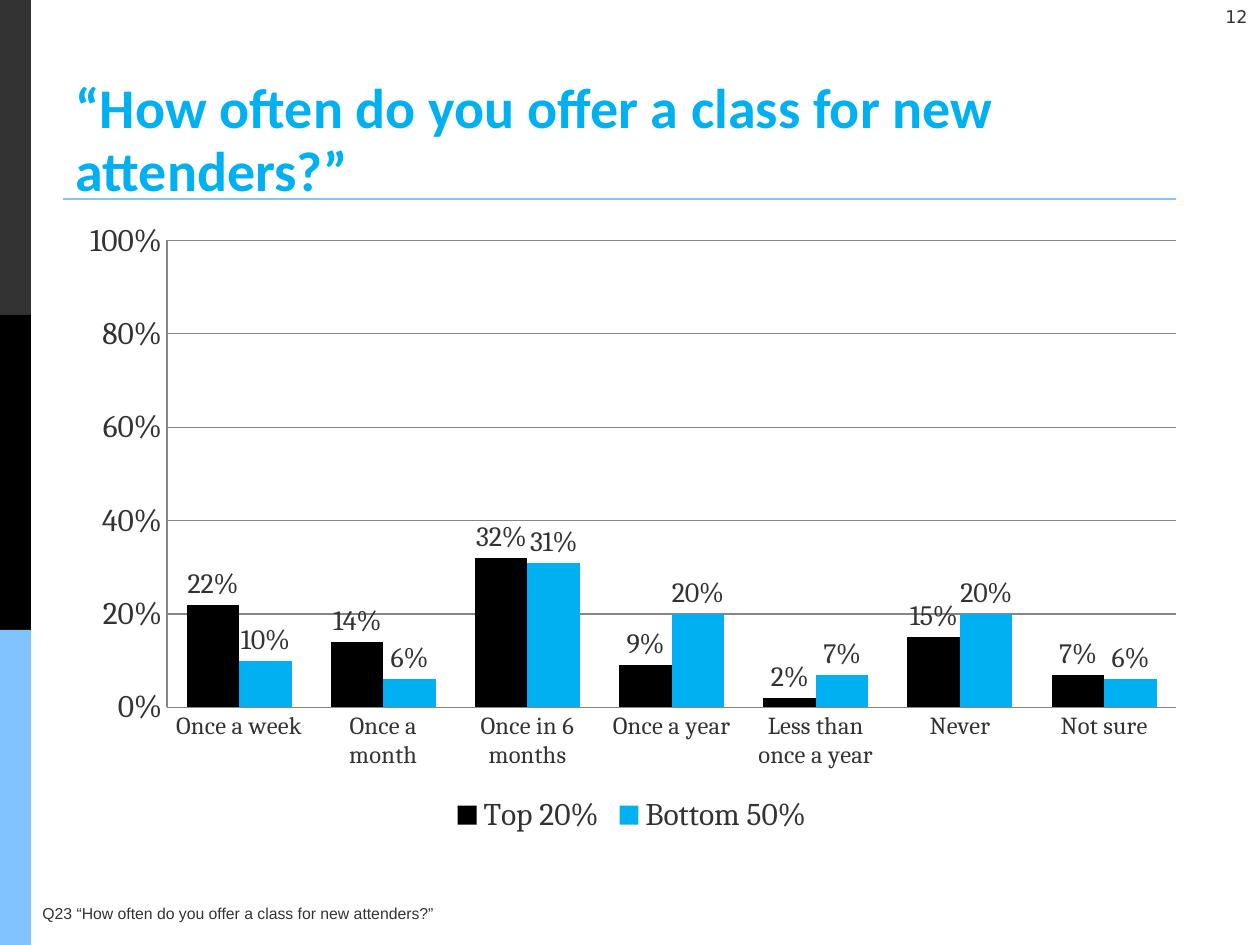
"""Build a slide charting how often churches offer a class for new attenders."""
import pptx
import pptx.chart.data
import pptx.dml.color
import pptx.enum.chart
import pptx.enum.shapes
import pptx.enum.text
import pptx.oxml
import pptx.oxml.ns
import pptx.util

ASK = "“How often do you offer a class for new attenders?”"
NOTE = "Q23 " + ASK
PAGE = "12"
GREY, BLACK, SKY, CYAN = "333333", "000000", "81C3FF", "00B0F0"
RULE = "868686"
BANDS = [GREY, BLACK, SKY]
CATS = ["Once a week", "Once a month", "Once in 6 months", "Once a year",
        "Less than once a year", "Never", "Not sure"]
SERIES = [
    ("Top 20%", BLACK, [0.22, 0.14, 0.32, 0.09, 0.02, 0.15, 0.07]),
    ("Bottom 50%", CYAN, [0.1, 0.06, 0.31, 0.2, 0.07, 0.2, 0.06]),
]
CHART = (65, 209, 1134, 631)
PLOT = (165, 239, 1012, 466)


def px(*nums):
    return [pptx.util.Emu(round(n * 914400 / 126)) for n in nums]


def tint(code):
    return pptx.dml.color.RGBColor.from_string(code)


def style(font, face, size, code, bold=False):
    font.name, font.size, font.bold = face, pptx.util.Pt(size), bold
    font.color.rgb = tint(code)


def add_bands(slide):
    for i, code in enumerate(BANDS):
        band = slide.shapes.add_shape(
            pptx.enum.shapes.MSO_SHAPE.RECTANGLE, *px(0, 315 * i, 31, 315))
        band.shadow.inherit = False
        band.fill.solid()
        band.fill.fore_color.rgb = tint(code)
        band.line.fill.background()


def add_rule(slide):
    rule = slide.shapes.add_connector(
        pptx.enum.shapes.MSO_CONNECTOR.STRAIGHT, *px(63, 199, 1176, 199))
    rule.line.color.rgb = tint(SKY)
    rule.line.width = pptx.util.Pt(1.5)
    rule._element.spPr.append(pptx.oxml.parse_xml(
        "<a:effectLst %s/>" % pptx.oxml.ns.nsdecls("a")))


def add_text(slide, box, text, face, size, side):
    frame = slide.shapes.add_textbox(*px(*box)).text_frame
    frame.word_wrap = True
    frame.text = text
    para = frame.paragraphs[0]
    para.alignment = side
    style(para.runs[0].font, face, size, GREY)


def set_title(slide):
    title = slide.shapes.title
    title.left, title.top, title.width, title.height = px(63, 52, 1111, 157)
    frame = title.text_frame
    frame.text = ASK
    frame.word_wrap = True
    frame.auto_size = pptx.enum.text.MSO_AUTO_SIZE.NONE
    frame.vertical_anchor = pptx.enum.text.MSO_ANCHOR.BOTTOM
    para = frame.paragraphs[0]
    para.alignment = pptx.enum.text.PP_ALIGN.LEFT
    para.line_spacing = pptx.util.Pt(36)
    style(para.runs[0].font, "Calibri", 32, CYAN, True)


def place_plot(chart):
    left, top, wide, high = CHART
    x, y, w, h = PLOT
    parts = {"x": (x - left) / wide, "y": (y - top) / high,
             "w": w / wide, "h": h / high}
    marks = "".join('<c:%sMode val="edge"/>' % k for k in "xy")
    marks += "".join('<c:%s val="%.2f"/>' % pair for pair in parts.items())
    area = chart._chartSpace.chart.plotArea
    for old in area.findall(pptx.oxml.ns.qn("c:layout")):
        area.remove(old)
    area.insert(0, pptx.oxml.parse_xml(
        '<c:layout %s><c:manualLayout><c:layoutTarget val="inner"/>%s'
        "</c:manualLayout></c:layout>" % (pptx.oxml.ns.nsdecls("c"), marks)))


def add_chart(slide):
    kinds = pptx.enum.chart
    data = pptx.chart.data.CategoryChartData(number_format="0%")
    data.categories = CATS
    for name, _, vals in SERIES:
        data.add_series(name, vals)
    chart = slide.shapes.add_chart(
        kinds.XL_CHART_TYPE.COLUMN_CLUSTERED, *px(*CHART), data).chart
    style(chart.font, "Cambria", 18, GREY)
    chart.has_title = False
    chart.has_legend = True
    chart.legend.position = kinds.XL_LEGEND_POSITION.BOTTOM
    chart.legend.include_in_layout = False
    for axis, size in ((chart.category_axis, 14), (chart.value_axis, 18)):
        axis.major_tick_mark = kinds.XL_TICK_MARK.NONE
        axis.format.line.color.rgb = tint(RULE)
        style(axis.tick_labels.font, "Cambria", size, GREY)
    scale = chart.value_axis
    scale.minimum_scale, scale.maximum_scale, scale.major_unit = 0, 1, 0.2
    scale.tick_labels.number_format = "0%"
    scale.tick_labels.number_format_is_linked = False
    scale.major_gridlines.format.line.color.rgb = tint(RULE)
    plot = chart.plots[0]
    plot.gap_width, plot.overlap, plot.vary_by_categories = 75, 0, False
    for bars, (_, code, _) in zip(plot.series, SERIES):
        bars.format.fill.solid()
        bars.format.fill.fore_color.rgb = tint(code)
        tags = bars.data_labels
        tags.show_value = True
        tags.number_format, tags.number_format_is_linked = "0%", False
        tags.position = kinds.XL_LABEL_POSITION.OUTSIDE_END
        style(tags.font, "Cambria", 16, GREY)
    place_plot(chart)


def main():
    deck = pptx.Presentation()
    deck.slide_width, deck.slide_height = px(1260, 945)
    slide = deck.slides.add_slide(deck.slide_layouts[5])
    sides = pptx.enum.text.PP_ALIGN
    add_bands(slide)
    add_rule(slide)
    add_text(slide, (1197, 0, 63, 42), PAGE, "DejaVu Sans", 10, sides.RIGHT)
    add_text(slide, (30, 898, 942, 32), NOTE, "Arial", 9, sides.LEFT)
    add_chart(slide)
    set_title(slide)
    deck.save("out.pptx")


if __name__ == "__main__":
    main()
